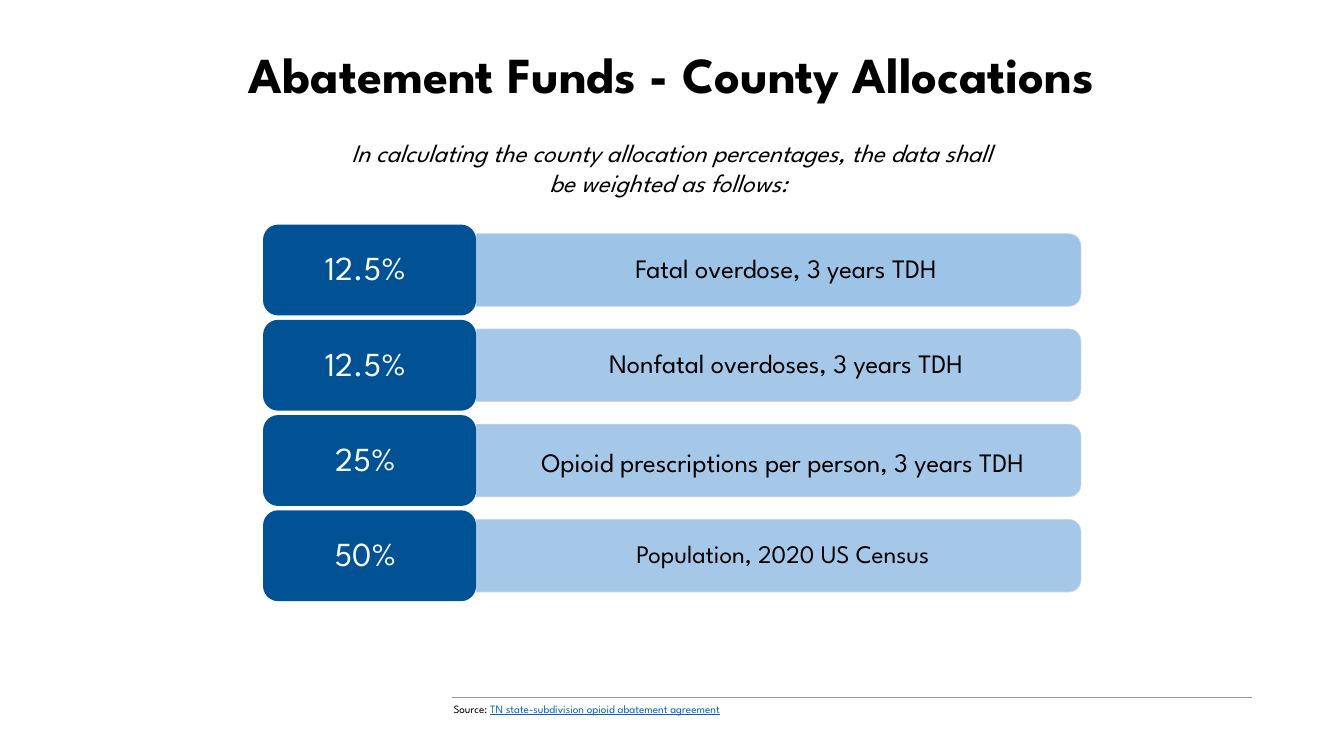
from lxml import etree
from pptx import Presentation
from pptx.dml.color import RGBColor
from pptx.enum.shapes import MSO_CONNECTOR, MSO_SHAPE
from pptx.enum.text import MSO_ANCHOR, MSO_AUTO_SIZE, PP_ALIGN
from pptx.oxml.ns import qn
from pptx.util import Cm, Pt

ROUND, BAR = MSO_SHAPE.ROUNDED_RECTANGLE, MSO_SHAPE.ROUND_2_SAME_RECTANGLE
STRAIGHT = MSO_CONNECTOR.STRAIGHT
TOP, MIDDLE = MSO_ANCHOR.TOP, MSO_ANCHOR.MIDDLE
LEFT, CENTER = PP_ALIGN.LEFT, PP_ALIGN.CENTER
FIXED = MSO_AUTO_SIZE.NONE

TITLE = "Abatement Funds - County Allocations"
LEAD = ("In calculating the county allocation percentages, "
        "the data shall be weighted as follows: ")
SOURCE = ("Source: ", "TN state-subdivision opioid abatement agreement")
ROWS = [
    ("12.5% ", "Fatal overdose, 3 years TDH", 19, 100, 0.1),
    ("12.5% ", "Nonfatal overdoses, 3 years TDH", 19, 90, 0.1),
    ("25% ", "Opioid prescriptions per person, 3 years TDH ", 19, 90, 0.25),
    ("50% ", "Population, 2020 US Census ", 18, 90, 0.1),
]

FACE = "League Spartan"
BLACK, WHITE, NAVY, SKY = "000000", "F6F6F6", "005295", "9DC3E6"
EDGE, GREY, LINK = "CFD5EA", "929897", "0563C1"

LEFT_X, TOP_Y, STEP = 6.63, 5.66, 2.4
BADGE_W, BADGE_H = 5.37, 2.29
BAR_W, BAR_H = 15.24, 1.83
LABEL_W, LABEL_H = 15.14, 1.65


def rgb(code):
    return RGBColor.from_string(code)


def fade(fmt, share):
    tint = next(fmt.iter(qn("a:srgbClr")))
    etree.SubElement(tint, qn("a:alpha"), val=str(share * 1000))


def write(frame, runs, align, anchor, space=1, **pads):
    form = {"word_wrap": True, "auto_size": FIXED, "vertical_anchor": anchor}
    for key, val in {**form, **pads}.items():
        setattr(frame, key, val)
    para = frame.paragraphs[0]
    para.alignment, para.line_spacing = align, space
    for text, size, color, style in runs:
        run = para.add_run()
        run.text = text
        for key, val in {"name": FACE, "size": Pt(size), **style}.items():
            setattr(run.font, key, val)
        run.font.color.rgb = rgb(color)


def block(slide, kind, x, y, w, h, color):
    shape = slide.shapes.add_shape(kind, Cm(x), Cm(y), Cm(w), Cm(h))
    shape.shadow.inherit = False
    shape.fill.solid()
    shape.fill.fore_color.rgb = rgb(color)
    shape.line.fill.background()
    return shape


def box(slide, x, y, w, h):
    return slide.shapes.add_textbox(Cm(x), Cm(y), Cm(w), Cm(h)).text_frame


def add_row(slide, top, share, label, size, alpha, pad):
    mid = top + BADGE_H / 2
    edge = LEFT_X + BADGE_W
    bar = block(slide, BAR, edge + (BAR_W - BAR_H) / 2, mid - BAR_W / 2,
                BAR_H, BAR_W, SKY)
    bar.rotation = 90
    if alpha < 100:
        fade(bar.fill.fore_color._xFill, alpha)
    bar.line.color.rgb = rgb(EDGE)
    bar.line.width = Pt(0.5)
    fade(bar.line._ln, 90)
    write(box(slide, edge, mid - LABEL_H / 2, LABEL_W, LABEL_H),
          [(label, size, BLACK, {})], CENTER, MIDDLE, 0.9,
          margin_left=Cm(0.68), margin_right=Cm(0.2),
          margin_top=Cm(pad), margin_bottom=Cm(0.1))
    badge = block(slide, ROUND, LEFT_X, top, BADGE_W, BADGE_H, NAVY)
    write(badge.text_frame, [(share, 24, WHITE, {})], CENTER, MIDDLE, 0.9)


def main():
    deck = Presentation()
    deck.slide_width, deck.slide_height = Cm(33.87), Cm(19.05)
    slide = deck.slides.add_slide(deck.slide_layouts[5])

    rule = slide.shapes.add_connector(STRAIGHT, Cm(11.38), Cm(17.57),
                                      Cm(31.55), Cm(17.57))
    rule.line.color.rgb = rgb(GREY)
    rule.line.width = Pt(0.75)
    etree.SubElement(rule._element.spPr, qn("a:effectLst"))

    title = slide.shapes.title
    spot = {"left": 2.92, "top": 1.14, "width": 28.02, "height": 2.54}
    for key, val in spot.items():
        setattr(title, key, Cm(val))
    write(title.text_frame, [(TITLE, 36, BLACK, {"bold": True})],
          CENTER, TOP, 0.9)

    write(box(slide, 11.18, 17.57, 8.6, 0.6),
          [(SOURCE[0], 8, BLACK, {}),
           (SOURCE[1], 8, LINK, {"underline": True})], LEFT, TOP)
    write(box(slide, 8.41, 3.33, 17.04, 1.8),
          [(LEAD, 18, BLACK, {"italic": True})], CENTER, TOP)

    for i, row in enumerate(ROWS):
        add_row(slide, TOP_Y + i * STEP, *row)
    deck.save("out.pptx")


if __name__ == "__main__":
    main()
